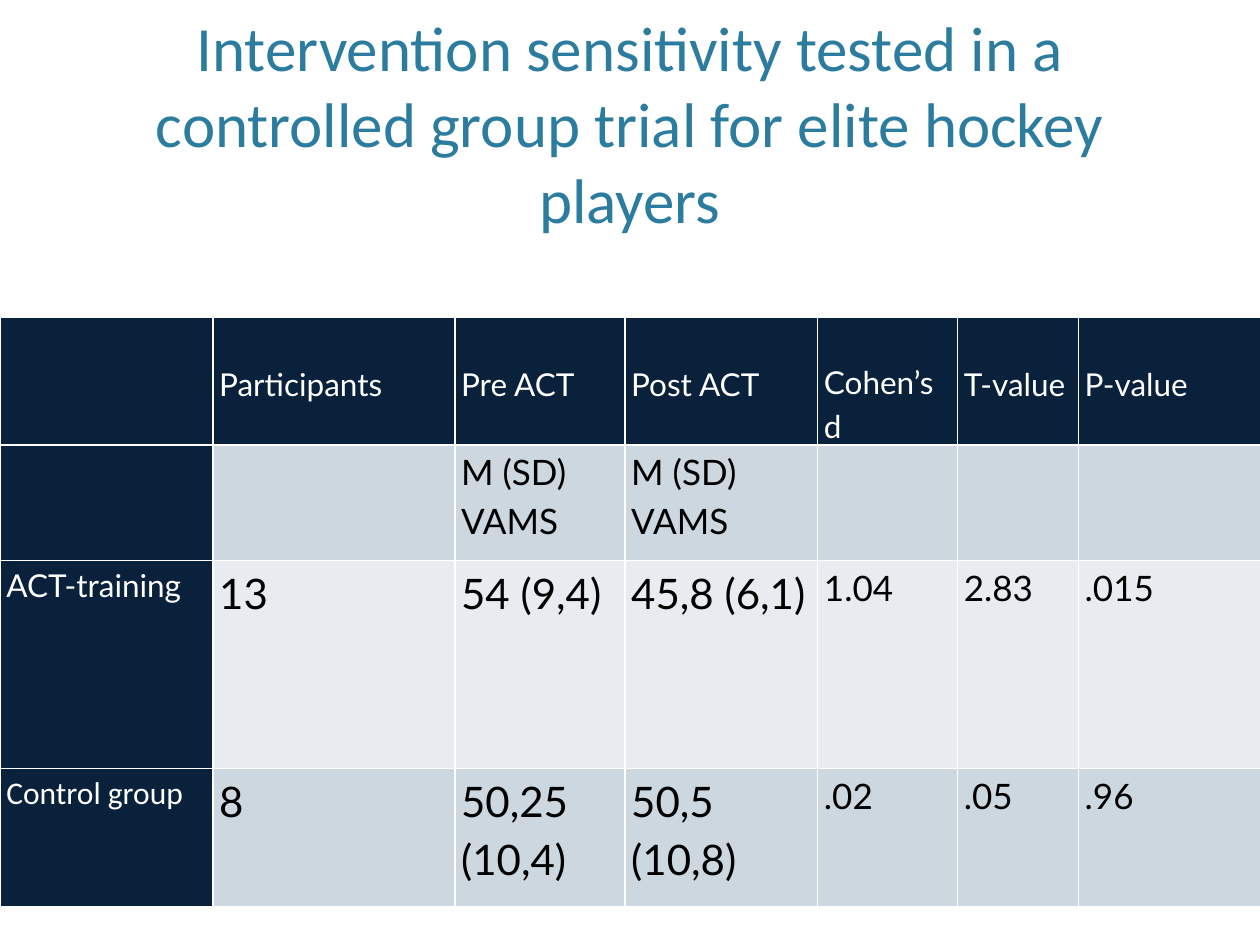
"""Build the slide on intervention sensitivity for elite hockey players."""
from pptx import Presentation
from pptx.dml.color import RGBColor
from pptx.enum import text as t
from pptx.oxml import parse_xml
from pptx.util import Inches, Pt

TEAL = RGBColor(0x2C, 0x7C, 0x9F)
NAVY = RGBColor(0x09, 0x21, 0x3B)
BAND = RGBColor(0xCD, 0xD7, 0xDF)
PALE = RGBColor(0xE8, 0xEC, 0xF0)
WHITE = RGBColor(0xFF, 0xFF, 0xFF)
BLACK = RGBColor(0x00, 0x00, 0x00)

TITLE = "Intervention sensitivity tested in a controlled group trial for elite hockey players"
ROWS = [
    ["", "Participants", "Pre ACT", "Post ACT", "Cohen’s d", "T-value", "P-value"],
    ["", "", "M (SD)\nVAMS", "M (SD)\nVAMS", "", "", ""],
    ["ACT-training", "13", "54 (9,4)", "45,8 (6,1)", "1.04", "2.83", ".015"],
    ["Control group", "8", "50,25 (10,4)", "50,5 (10,8)", ".02", ".05", ".96"],
]
COL_WIDTHS = [1.69, 1.92, 1.35, 1.53, 1.11, 0.96, 1.45]
ROW_HEIGHTS = [1.01, 0.92, 1.65, 1.1]
NS = "http://schemas.openxmlformats.org/drawingml/2006/main"


def style(p, size, color, font):
    for r in p.runs:
        r.font.size, r.font.name = Pt(size), font
        r.font.color.rgb = color


def add_borders(cell):
    tc_pr = cell._tc.get_or_add_tcPr()
    for i, side in enumerate(("lnL", "lnR", "lnT", "lnB")):
        tc_pr.insert(i, parse_xml(
            f'<a:{side} xmlns:a="{NS}" w="12700"><a:solidFill>'
            f'<a:srgbClr val="{WHITE}"/></a:solidFill></a:{side}>'))


def fill_cell(cell, row, col, value):
    head = row == 0 or col == 0
    cell.fill.solid()
    cell.fill.fore_color.rgb = NAVY if head else PALE if row == 2 else BAND
    add_borders(cell)
    cell.margin_left = cell.margin_right = Inches(0.05)
    cell.margin_top = cell.margin_bottom = 0
    if row == 0:
        bottom = value == "Cohen’s d"
        cell.vertical_anchor = t.MSO_ANCHOR.BOTTOM if bottom else t.MSO_ANCHOR.MIDDLE
    cell.text_frame.text = value
    size = 18 if head else 24 if row > 1 and col < 4 else 20
    font = "Calibri" if value == "Control group" else "Lato"
    for p in cell.text_frame.paragraphs:
        p.line_spacing = 1.15
        style(p, size, WHITE if head else BLACK, font)


def main():
    prs = Presentation()
    prs.slide_width, prs.slide_height = Inches(10), Inches(7.5)
    s = prs.slides.add_slide(prs.slide_layouts[6])

    sp = s.shapes.add_textbox(Inches(0.6), 0, Inches(8.8), Inches(1.92))
    tf = sp.text_frame
    tf.word_wrap = True
    tf.vertical_anchor = t.MSO_ANCHOR.BOTTOM
    tf.text = TITLE
    tf.paragraphs[0].alignment = t.PP_ALIGN.CENTER
    style(tf.paragraphs[0], 36, TEAL, "Calibri")

    table = s.shapes.add_table(
        len(ROWS), len(COL_WIDTHS), 0, Inches(2.52),
        Inches(sum(COL_WIDTHS)), Inches(sum(ROW_HEIGHTS))).table
    for column, width in zip(table.columns, COL_WIDTHS):
        column.width = Inches(width)
    for i, (height, values) in enumerate(zip(ROW_HEIGHTS, ROWS)):
        table.rows[i].height = Inches(height)
        for j, value in enumerate(values):
            fill_cell(table.cell(i, j), i, j, value)
    prs.save("out.pptx")


if __name__ == "__main__":
    main()
